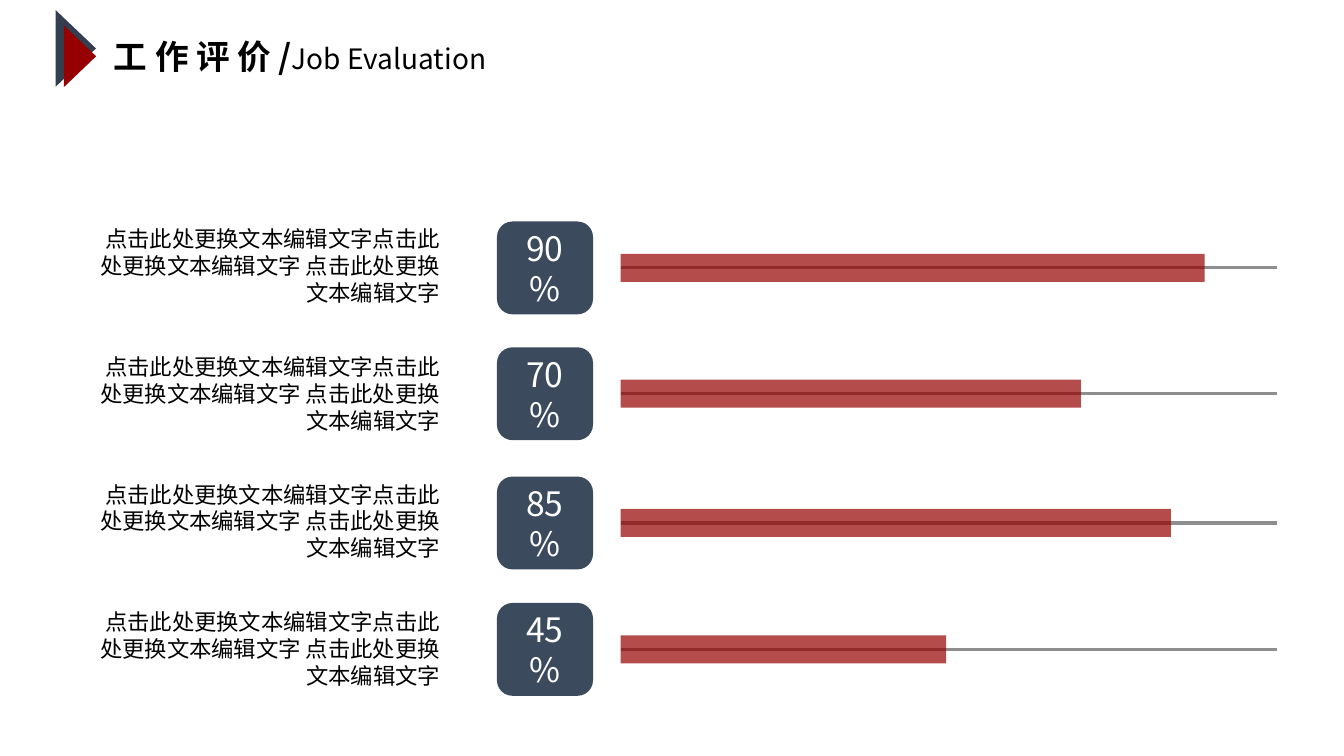
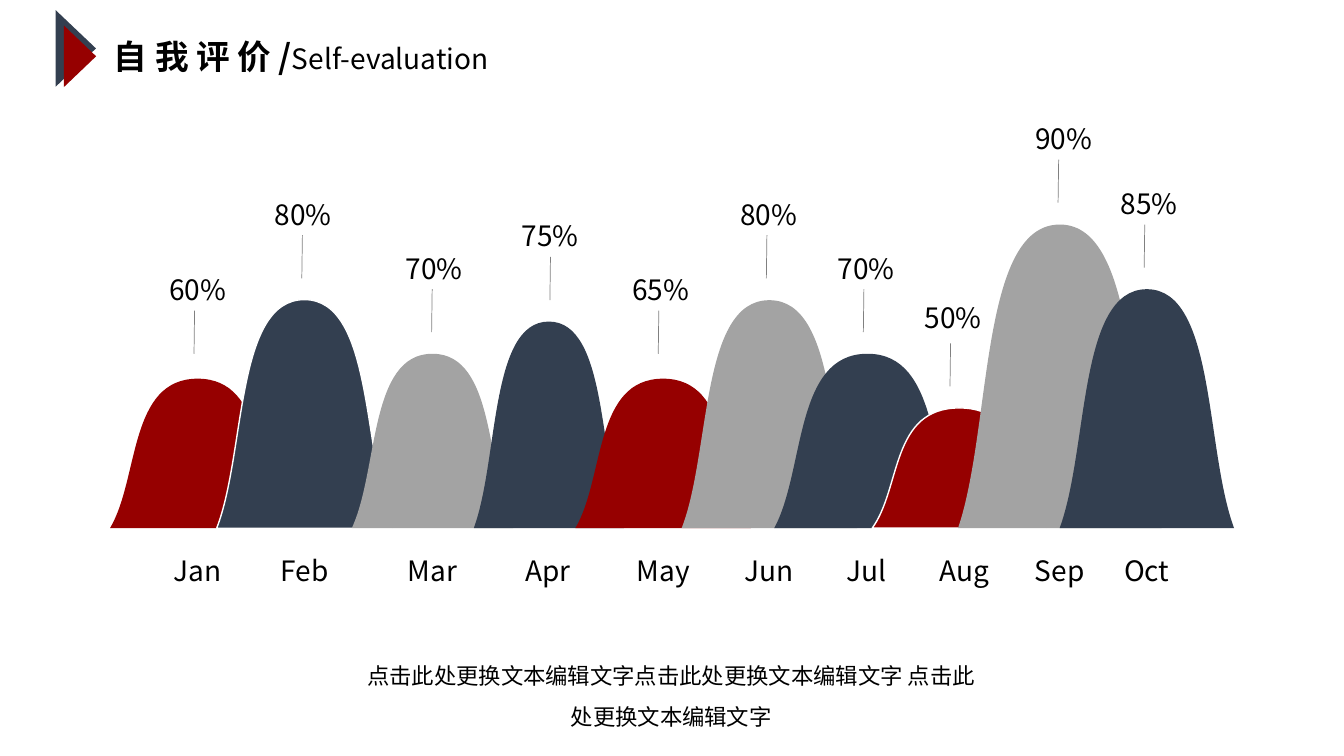
import lxml.etree
import pptx
import pptx.dml.color
import pptx.enum.shapes
import pptx.enum.text
import pptx.oxml.ns
import pptx.util

Pt = pptx.util.Pt
RGBColor = pptx.dml.color.RGBColor
Shape = pptx.enum.shapes.MSO_SHAPE
Align = pptx.enum.text.PP_ALIGN
Anchor = pptx.enum.text.MSO_ANCHOR
qn = pptx.oxml.ns.qn

FONT = "Noto Sans CJK SC"
BLACK = RGBColor(0x00, 0x00, 0x00)
WHITE = RGBColor(0xFF, 0xFF, 0xFF)
RED = RGBColor(0x96, 0x00, 0x00)
NAVY = RGBColor(0x33, 0x3F, 0x50)
SLATE = RGBColor(0x3C, 0x4A, 0x5E)
SILVER = RGBColor(0xA3, 0xA3, 0xA3)
TRACK_GREY = RGBColor(0x8E, 0x8E, 0x8E)
STEM_GREY = RGBColor(0x80, 0x80, 0x80)

# Content
BODY = "点击此处更换文本编辑文字点击此处更换文本编辑文字 点击此处更换文本编辑文字"
JOB_TITLE = ("工 作 评 价 /", "Job Evaluation")
SELF_TITLE = ("自 我 评 价 /", "Self-evaluation")

# Score, badge top, bar length
RATINGS = [
    ("90%", 158.2, 417),
    ("70%", 248.1, 328.7),
    ("85%", 340.4, 393),
    ("45%", 430.7, 232.5),
]

# Month, hill left, hill width, hill top, fill, outlined
HILLS = [
    ("Jan", 78.6, 125.3, 270.5, RED, False),
    ("Feb", 154.8, 125.3, 214, NAVY, True),
    ("Mar", 251.3, 115.2, 252.7, SILVER, False),
    ("Apr", 338.4, 107.3, 229.7, NAVY, False),
    ("May", 411, 125.3, 270.5, RED, False),
    ("Jun", 486.9, 125.3, 214.4, SILVER, False),
    ("Jul", 553, 133.2, 252.7, NAVY, False),
    ("Aug", 623, 124.6, 291.4, RED, True),
    ("Sep", 684.3, 145.4, 160.4, SILVER, False),
    ("Oct", 756.9, 124.6, 206.6, NAVY, False),
]
# Score, score centre, score top, stem x, stem top
SCORES = [
    ("60%", 141.3, 191.4, 139, 221.9),
    ("80%", 216.7, 137.4, 216, 168),
    ("70%", 310.2, 175.8, 308.7, 206.5),
    ("75%", 392.9, 152.8, 393.2, 183.5),
    ("65%", 471.9, 191.4, 470.6, 221.9),
    ("80%", 549, 137.4, 547.8, 168),
    ("70%", 618.7, 175.8, 617.1, 206.5),
    ("50%", 680.8, 211.3, 679, 245.2),
    ("90%", 759.8, 83.4, 756.2, 114),
    ("85%", 820.9, 129.8, 817.7, 160.4),
]
MONTH_SHIFT = {"Apr": -0.5, "Jul": -0.5, "Aug": 3.5}

# Layout
BADGE_LEFT, BADGE_WIDTH, BADGE_HEIGHT = 355, 68.6, 66.3
TRACK_LEFT, TRACK_RIGHT = 443.4, 912.3
BODY_TOP, BODY_PITCH = 157.6, 91.1
HILL_BASE = 377.3
LABEL_WIDTH, LABEL_HEIGHT = 75, 31.7
MONTH_TOP = 391.7
STEM_LEAN, STEM_LENGTH = 0.4, 30.8
# Unit curves of a hill: two controls and an end point each
HILL_CURVES = [
    [(0.167, 0.67), (0.105, 0), (0.5, 0)],
    [(0.895, 0), (0.833, 0.67), (1, 1)],
]


def style_span(span, size, color=BLACK, bold=False):
    """Set the deck's font on one run, for Latin and East Asian text."""
    span.font.name = FONT
    span.font.size = Pt(size)
    span.font.bold = bold
    span.font.color.rgb = color
    east_asian = lxml.etree.SubElement(span.font._element, qn("a:ea"))
    east_asian.set("typeface", FONT)


def write(frame, text, size, align, color=BLACK, spacing=None):
    """Fill a text frame with one formatted paragraph."""
    frame.text = text
    frame.word_wrap = True
    para = frame.paragraphs[0]
    para.alignment = align
    if spacing:
        para.line_spacing = spacing
    for span in para.runs:
        style_span(span, size, color)


def add_text(page, text, left, top, width, height, size, align, spacing=None):
    """Add a wrapped text box."""
    box = page.shapes.add_textbox(Pt(left), Pt(top), Pt(width), Pt(height))
    write(box.text_frame, text, size, align, spacing=spacing)


def add_block(page, kind, left, top, width, height, fill):
    """Add a flat preset shape without outline or shadow."""
    block = page.shapes.add_shape(kind, Pt(left), Pt(top), Pt(width), Pt(height))
    block.shadow.inherit = False
    block.fill.solid()
    block.fill.fore_color.rgb = fill
    block.line.fill.background()
    return block


def add_line(page, start, end, color, weight, opacity=None):
    """Add a straight line without shadow; opacity is in percent."""
    line = page.shapes.add_connector(
        pptx.enum.shapes.MSO_CONNECTOR.STRAIGHT, *map(Pt, start + end))
    line.line.color.rgb = color
    line.line.width = Pt(weight)
    properties = line._element.spPr
    if opacity:
        tint = properties.find(".//" + qn("a:srgbClr"))
        lxml.etree.SubElement(tint, qn("a:alpha")).set("val", str(opacity * 1000))
    lxml.etree.SubElement(properties, qn("a:effectLst"))


def add_page(deck, title_parts):
    """Add a slide with the arrow mark and the two-part title."""
    page = deck.slides.add_slide(deck.slide_layouts[5])
    for left, top, width, height, fill in (
            (26.8, 20.2, 54.7, 28.8, NAVY), (35.2, 28.7, 43.9, 23, RED)):
        mark = add_block(page, Shape.ISOSCELES_TRIANGLE, left, top, width, height, fill)
        mark.rotation = 90
    title = page.shapes.title
    title.left, title.top, title.width, title.height = map(Pt, (74.2, 22, 447, 36))
    frame = title.text_frame
    frame.auto_size = pptx.enum.text.MSO_AUTO_SIZE.NONE
    frame.vertical_anchor = Anchor.TOP
    para = frame.paragraphs[0]
    para.alignment = Align.LEFT
    for text, size, bold in zip(title_parts, (24, 20), (True, False)):
        span = para.add_run()
        span.text = text
        style_span(span, size, bold=bold)
    return page


def add_hill(page, left, width, top, fill, outlined):
    """Draw one bell-shaped column standing on the common base."""
    height = HILL_BASE - top
    start = (Pt(left), Pt(HILL_BASE))
    builder = page.shapes.build_freeform(*start)
    ends = [(Pt(left + curve[-1][0] * width), Pt(top + curve[-1][1] * height))
            for curve in HILL_CURVES]
    builder.add_line_segments(ends + [start], close=True)
    hill = builder.convert_to_shape()
    edges = list(hill._element.iter(qn("a:lnTo")))
    for edge, curve in zip(edges, HILL_CURVES):
        bend = lxml.etree.Element(qn("a:cubicBezTo"))
        for x, y in curve:
            point = lxml.etree.SubElement(bend, qn("a:pt"))
            point.set("x", str(Pt(x * width)))
            point.set("y", str(Pt(y * height)))
        edge.getparent().replace(edge, bend)
    hill.shadow.inherit = False
    hill.fill.solid()
    hill.fill.fore_color.rgb = fill
    if outlined:
        hill.line.color.rgb = WHITE
        hill.line.width = Pt(1)
    else:
        hill.line.fill.background()


def add_label(page, text, center, top):
    """Add a short label centred on a horizontal position."""
    add_text(page, text, center - LABEL_WIDTH / 2, top, LABEL_WIDTH, LABEL_HEIGHT,
             20, Align.CENTER)


def build_job_page(deck):
    """Build the rating rows: text, badge and bar."""
    page = add_page(deck, JOB_TITLE)
    for row, (score, top, length) in enumerate(RATINGS):
        middle = top + BADGE_HEIGHT / 2
        add_line(page, (TRACK_LEFT, middle), (TRACK_RIGHT, middle), TRACK_GREY, 2.25)
        add_line(page, (TRACK_LEFT, middle), (TRACK_LEFT + length, middle), RED, 20, 70)
        badge = add_block(page, Shape.ROUNDED_RECTANGLE, BADGE_LEFT, top,
                          BADGE_WIDTH, BADGE_HEIGHT, SLATE)
        badge.text_frame.vertical_anchor = Anchor.MIDDLE
        write(badge.text_frame, score, 24, Align.CENTER, WHITE)
        add_text(page, BODY, 58.7, BODY_TOP + row * BODY_PITCH, 262.8, 65.5,
                 16, Align.RIGHT)


def build_self_page(deck):
    """Build the monthly hills with their labels and the closing text."""
    page = add_page(deck, SELF_TITLE)
    for hill, label in zip(HILLS, SCORES):
        month, left, width, top, fill, outlined = hill
        score, center, score_top, stem, stem_top = label
        add_hill(page, left, width, top, fill, outlined)
        add_label(page, month, left + width / 2 + MONTH_SHIFT.get(month, 0), MONTH_TOP)
        add_label(page, score, center, score_top)
        add_line(page, (stem, stem_top), (stem - STEM_LEAN, stem_top + STEM_LENGTH),
                 STEM_GREY, 0.5)
    add_text(page, BODY, 253.4, 460, 452.2, 65.5, 16, Align.CENTER, 1.5)


deck = pptx.Presentation()
deck.slide_width, deck.slide_height = Pt(960), Pt(540)
build_job_page(deck)
build_self_page(deck)
deck.save("out.pptx")
